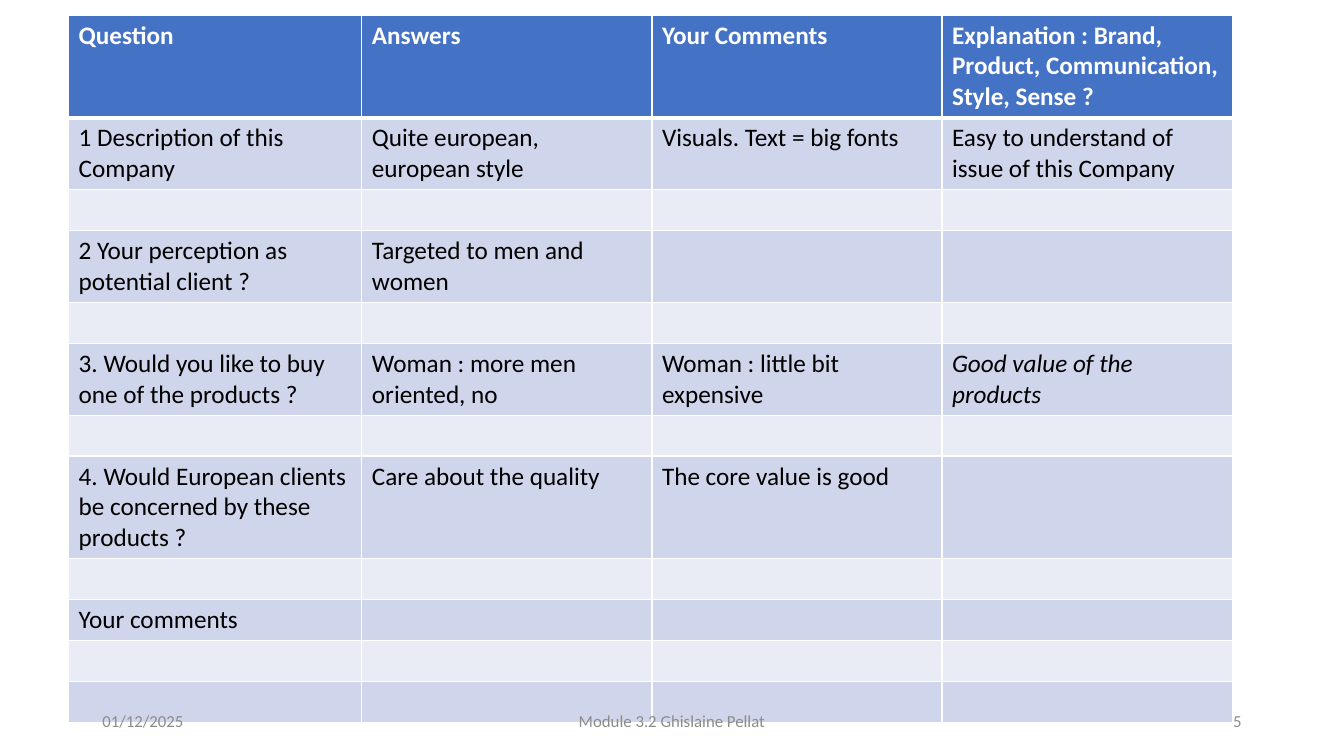
import dataclasses

import lxml.etree
import pptx
import pptx.dml.color
import pptx.enum.text
import pptx.oxml.ns
import pptx.util

Cm = pptx.util.Cm
Pt = pptx.util.Pt
ALIGN = pptx.enum.text.PP_ALIGN
qn = pptx.oxml.ns.qn


@dataclasses.dataclass
class Theme:
    font: str = "Calibri"
    header: str = "4472C4"
    band_dark: str = "CFD5EA"
    band_light: str = "E9EBF5"
    white: str = "FFFFFF"
    black: str = "000000"
    footer: str = "8C8C8C"
    table_size: int = 18
    footer_size: int = 12
    rule: int = 1
    header_rule: int = 3


HEADINGS = ["Question", "Answers", "Your Comments",
            "Explanation : Brand, Product, Communication, Style, Sense ?"]
EMPTY = (1, [])

# Each row: number of text lines, then its leading cells
ROWS = [
    (3, HEADINGS),
    (2, ["1 Description of this Company", "Quite european, european style",
         "Visuals. Text = big fonts",
         "Easy to understand of issue of this Company"]),
    EMPTY,
    (2, ["2 Your perception as potential client ?",
         "Targeted to men and women"]),
    EMPTY,
    (2, ["3. Would you like to buy one of the products ?",
         "Woman : more men oriented, no", "Woman : little bit expensive",
         "Good value of the products"]),
    EMPTY,
    (3, ["4. Would European clients be concerned by these products ?",
         "Care about the quality", "The core value is good"]),
    EMPTY,
    (1, ["Your comments"]),
    EMPTY,
    EMPTY,
]
ITALIC_CELL = (5, 3)
COL_WIDTHS = [7.39, 7.31, 7.31, 7.31]
CELL_PADDING, LINE_HEIGHT = 0.25, 0.78


def rgb(value):
    return pptx.dml.color.RGBColor.from_string(value)


def write(tf, text, *, font, size, color, bold=False, italic=False,
          align=ALIGN.LEFT):
    p = tf.paragraphs[0]
    p.alignment = align
    r = p.add_run()
    r.text = text
    r.font.name = font
    r.font.size = Pt(size)
    r.font.color.rgb = rgb(color)
    r.font.bold = bold
    r.font.italic = italic


class SlideBuilder:
    def __init__(self, slide, theme):
        self.slide = slide
        self.theme = theme

    def borders(self, cell, top, bottom):
        tcPr = cell._tc.get_or_add_tcPr()
        widths = {"a:lnL": self.theme.rule, "a:lnR": self.theme.rule,
                  "a:lnT": top, "a:lnB": bottom}
        for i, (tag, width) in enumerate(widths.items()):
            ln = lxml.etree.Element(qn(tag), w=str(Pt(width)))
            fill = lxml.etree.SubElement(ln, qn("a:solidFill"))
            lxml.etree.SubElement(fill, qn("a:srgbClr"), val=self.theme.white)
            tcPr.insert(i, ln)

    def table(self, left, top, widths, rows):
        t = self.theme
        heights = [CELL_PADDING + LINE_HEIGHT * lines for lines, _ in rows]
        table = self.slide.shapes.add_table(
            len(rows), len(widths), Cm(left), Cm(top),
            Cm(sum(widths)), Cm(sum(heights))).table
        for column, width in zip(table.columns, widths):
            column.width = Cm(width)

        for i, (_, texts) in enumerate(rows):
            table.rows[i].height = Cm(heights[i])
            is_header = i == 0
            band = t.band_dark if i % 2 else t.band_light
            for j in range(len(widths)):
                cell = table.cell(i, j)
                cell.fill.solid()
                cell.fill.fore_color.rgb = rgb(t.header if is_header else band)
                self.borders(cell, t.header_rule if i == 1 else t.rule,
                             t.header_rule if is_header else t.rule)
                if j < len(texts):
                    write(cell.text_frame, texts[j], font=t.font,
                          size=t.table_size, bold=is_header,
                          color=t.white if is_header else t.black,
                          italic=(i, j) == ITALIC_CELL)

    def footer(self, text, left, width, align):
        sp = self.slide.shapes.add_textbox(Cm(left), Cm(17.65),
                                           Cm(width), Cm(1.02))
        tf = sp.text_frame
        tf.word_wrap = True
        tf.vertical_anchor = pptx.enum.text.MSO_ANCHOR.MIDDLE
        write(tf, text, font=self.theme.font, size=self.theme.footer_size,
              color=self.theme.footer, align=align)


def main():
    prs = pptx.Presentation()
    prs.slide_width, prs.slide_height = Cm(33.87), Cm(19.05)
    builder = SlideBuilder(prs.slides.add_slide(prs.slide_layouts[6]), Theme())

    # Questionnaire
    builder.table(1.73, 0.38, COL_WIDTHS, ROWS)

    # Footer: date, module, slide number
    builder.footer("01/12/2025", 2.33, 7.62, ALIGN.LEFT)
    builder.footer("Module 3.2 Ghislaine Pellat", 11.22, 11.43, ALIGN.CENTER)
    builder.footer("5", 23.92, 7.62, ALIGN.RIGHT)

    prs.save("out.pptx")


if __name__ == "__main__":
    main()
